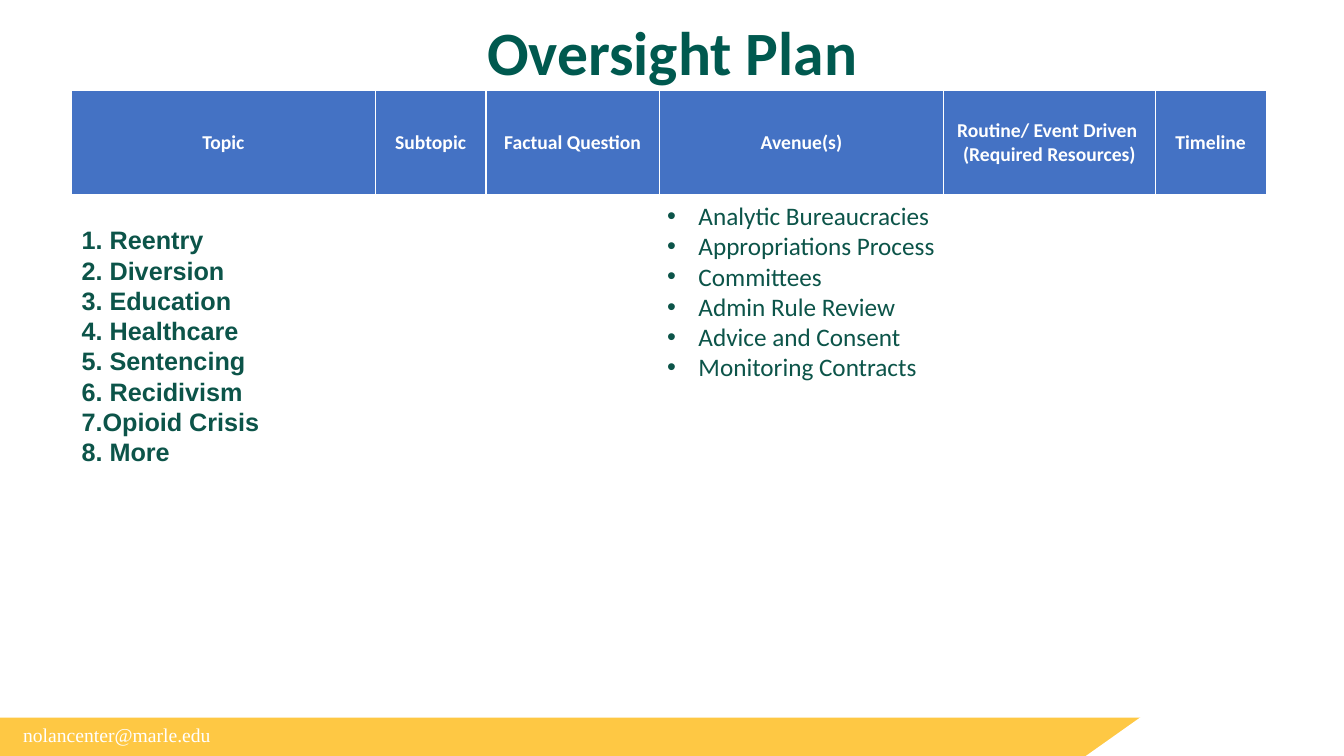
from lxml import etree
from pptx import Presentation
from pptx.dml.color import RGBColor
from pptx.enum.shapes import MSO_SHAPE
from pptx.enum.text import MSO_ANCHOR, MSO_AUTO_SIZE, PP_ALIGN
from pptx.oxml.ns import qn
from pptx.util import Inches, Pt

RECTANGLE = MSO_SHAPE.RECTANGLE
CENTER, LEFT = PP_ALIGN.CENTER, PP_ALIGN.LEFT
TOP, MIDDLE, BOTTOM = MSO_ANCHOR.TOP, MSO_ANCHOR.MIDDLE, MSO_ANCHOR.BOTTOM
NO_AUTOFIT = MSO_AUTO_SIZE.NONE

WHITE, YELLOW, BLUE = "FFFFFF", "FEC844", "4472C4"
TITLE_GREEN, BODY_GREEN = "00594F", "0C5449"
SANS, LIST_FONT, SERIF = "Calibri", "Arial", "Times New Roman"

HEADERS = [
    (22.58, ["Topic"]),
    (8.25, ["Subtopic"]),
    (12.9, ["Factual Question"]),
    (21.15, ["Avenue(s)"]),
    (15.75, ["Routine/ Event Driven ", "(Required Resources)"]),
    (8.25, ["Timeline"]),
]
TOPICS = [" Reentry", " Diversion", " Education", " Healthcare",
          " Sentencing", " Recidivism", "Opioid Crisis", " More"]
AVENUES = ["Analytic Bureaucracies", "Appropriations Process", "Committees",
           "Admin Rule Review", "Advice and Consent", "Monitoring Contracts"]
BORDERS = {"a:lnL": 1, "a:lnR": 1, "a:lnT": 1, "a:lnB": 3}


def color(value):
    return RGBColor.from_string(value)


def set_bullet(paragraph, tag, indent, **attributes):
    properties = paragraph._p.get_or_add_pPr()
    properties.set("marL", str(Inches(indent)))
    properties.set("indent", str(-Inches(indent)))
    if tag == "a:buChar":
        etree.SubElement(properties, qn("a:buFont"), typeface=LIST_FONT)
    etree.SubElement(properties, qn(tag), **attributes)


def write_text(frame, lines, size=18, font=SANS, fill=WHITE, bold=False,
               align=LEFT, anchor=TOP, spacing=None):
    frame.word_wrap = True
    frame.vertical_anchor = anchor
    for index, line in enumerate(lines):
        paragraph = frame.paragraphs[0] if index == 0 else frame.add_paragraph()
        paragraph.alignment = align
        paragraph.line_spacing = spacing
        run = paragraph.add_run()
        run.text = line
        run.font.size = Pt(size)
        run.font.name = font
        run.font.bold = bold
        run.font.color.rgb = color(fill)
    return frame.paragraphs


class SlideBuilder:
    """Builds one slide from positions given in percent of its width and height."""

    def __init__(self, presentation):
        self.width = presentation.slide_width
        self.height = presentation.slide_height
        self.slide = presentation.slides.add_slide(presentation.slide_layouts[5])

    def across(self, percent):
        return round(self.width * percent / 100)

    def down(self, percent):
        return round(self.height * percent / 100)

    def box(self, left, top, width, height):
        return (self.across(left), self.down(top),
                self.across(width), self.down(height))

    def title(self, position, text):
        shape = self.slide.shapes.title
        shape.left, shape.top, shape.width, shape.height = self.box(*position)
        shape.text_frame.auto_size = NO_AUTOFIT
        write_text(shape.text_frame, [text], size=44, fill=TITLE_GREEN,
                   bold=True, align=CENTER, anchor=BOTTOM, spacing=0.9)

    def rectangle(self, position, fill, rotation=0):
        shape = self.slide.shapes.add_shape(RECTANGLE, *self.box(*position))
        shape.shadow.inherit = False
        shape.fill.solid()
        shape.fill.fore_color.rgb = color(fill)
        shape.line.fill.background()
        shape.rotation = rotation

    def text(self, position, lines, **style):
        shape = self.slide.shapes.add_textbox(*self.box(*position))
        return write_text(shape.text_frame, lines, **style)

    def header_table(self, position, headers):
        frame = self.slide.shapes.add_table(1, len(headers), *self.box(*position))
        table = frame.table
        for column, cell, (width, lines) in zip(
                table.columns, table.rows[0].cells, headers):
            column.width = self.across(width)
            self.borders(cell)
            cell.fill.solid()
            cell.fill.fore_color.rgb = color(BLUE)
            write_text(cell.text_frame, lines, size=14, bold=True, align=CENTER)
            cell.vertical_anchor = MIDDLE

    def borders(self, cell):
        properties = cell._tc.get_or_add_tcPr()
        for tag, width in BORDERS.items():
            line = etree.SubElement(properties, qn(tag), w=str(Pt(width)))
            fill = etree.SubElement(line, qn("a:solidFill"))
            etree.SubElement(fill, qn("a:srgbClr"), val=WHITE)


def main():
    presentation = Presentation()
    presentation.slide_width = Inches(13.33)
    presentation.slide_height = Inches(7.5)
    builder = SlideBuilder(presentation)

    builder.rectangle((0, 94.93, 100, 5.07), YELLOW)
    builder.rectangle((88.15, 72.93, 15.08, 49.47), WHITE, rotation=54.7)
    builder.text((0.98, 94.93, 77.79, 4.53), ["nolancenter@marle.edu"],
                 size=14, font=SERIF)

    builder.title((6.9, 2.13, 86.27, 10.27), "Oversight Plan")
    builder.header_table((5.33, 12, 88.88, 13.87), HEADERS)

    topics = builder.text((5.33, 29.07, 22.88, 33.6), TOPICS,
                          font=LIST_FONT, fill=BODY_GREEN, bold=True)
    for paragraph in topics:
        set_bullet(paragraph, "a:buAutoNum", 0, type="arabicPeriod")

    avenues = builder.text((48.91, 25.87, 22.5, 25.6), AVENUES, fill=BODY_GREEN)
    for paragraph in avenues:
        set_bullet(paragraph, "a:buChar", 0.31, char="•")

    presentation.save("out.pptx")


if __name__ == "__main__":
    main()
